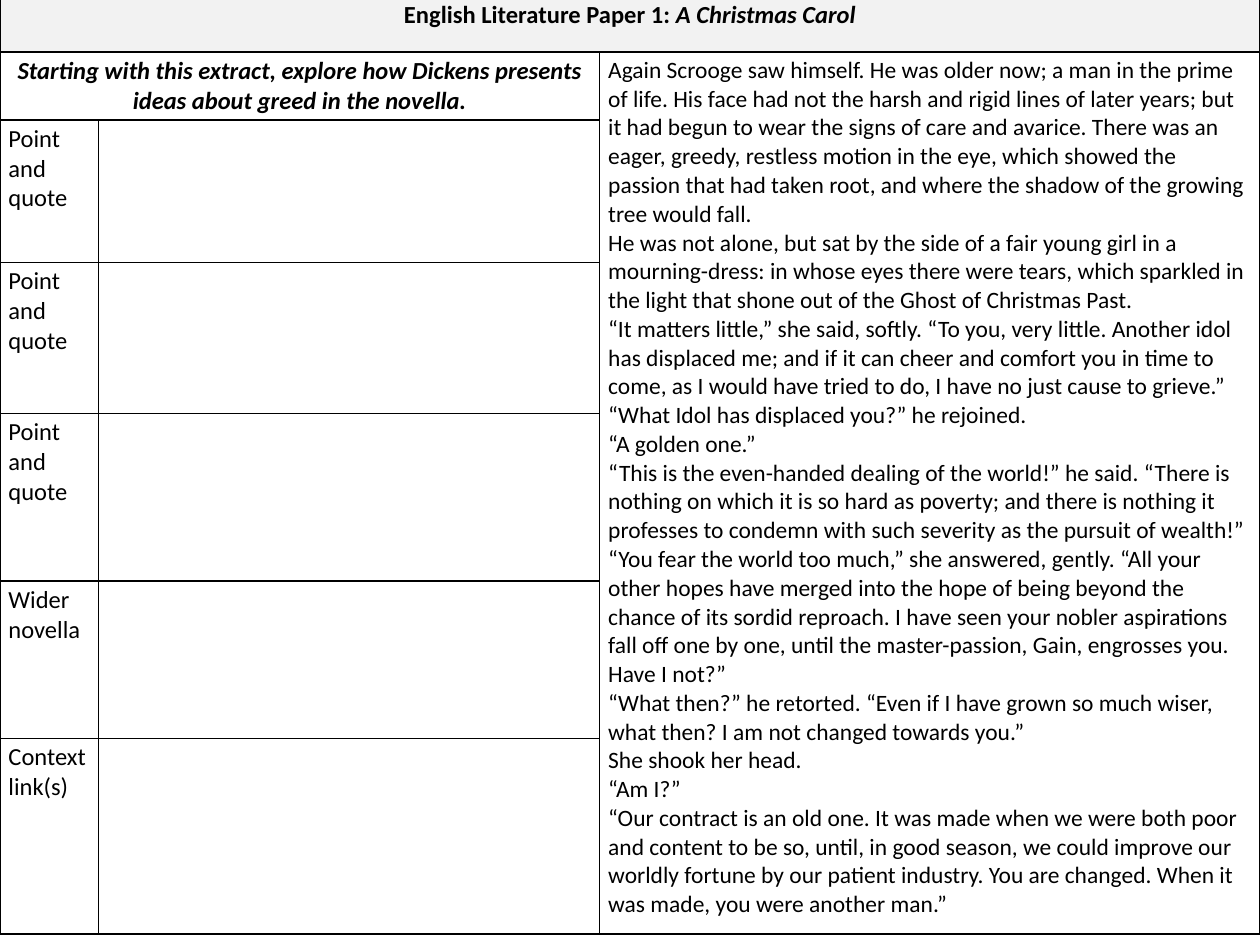
from lxml.etree import SubElement
from pptx import Presentation
from pptx.dml.color import RGBColor
from pptx.enum.text import PP_ALIGN as Align
from pptx.oxml.ns import qn
from pptx.util import Cm, Pt

COLOURS = {"ink": "000000", "header": "F2F2F2"}
FONT = "Calibri"
BORDER = Pt(1)

# Lengths in centimetres
SLIDE_SIZE = (25.4, 19.05)
TABLE_BOX = (0, -0.07, 25.4, 18.9)
COLUMN_SHARES = (0.78, 3.98, 5.24)
ROW_SHARES = (0.44, 0.54, 1.13, 1.2, 1.33, 1.25, 1.55)

TITLE = ("English Literature Paper 1: ", "A Christmas Carol")
QUESTION = ("Starting with this extract, explore how Dickens presents "
            "ideas about greed in the novella.")
PROMPTS = ["Point and quote"] * 3 + ["Wider novella", "Context link(s)"]
EXTRACT = [
    "Again Scrooge saw himself. He was older now; a man in the prime of life. "
    "His face had not the harsh and rigid lines of later years; but it had begun "
    "to wear the signs of care and avarice. There was an eager, greedy, restless "
    "motion in the eye, which showed the passion that had taken root, and where "
    "the shadow of the growing tree would fall.",
    "He was not alone, but sat by the side of a fair young girl in a "
    "mourning-dress: in whose eyes there were tears, which sparkled in the light "
    "that shone out of the Ghost of Christmas Past.",
    "“It matters little,” she said, softly. “To you, very little. Another idol "
    "has displaced me; and if it can cheer and comfort you in time to come, as I "
    "would have tried to do, I have no just cause to grieve.”",
    "“What Idol has displaced you?” he rejoined.",
    "“A golden one.”",
    "“This is the even-handed dealing of the world!” he said. “There is nothing "
    "on which it is so hard as poverty; and there is nothing it professes to "
    "condemn with such severity as the pursuit of wealth!”",
    "“You fear the world too much,” she answered, gently. “All your other hopes "
    "have merged into the hope of being beyond the chance of its sordid reproach. "
    "I have seen your nobler aspirations fall off one by one, until the "
    "master-passion, Gain, engrosses you. Have I not?”",
    "“What then?” he retorted. “Even if I have grown so much wiser, what then? "
    "I am not changed towards you.”",
    "She shook her head.",
    "“Am I?”",
    "“Our contract is an old one. It was made when we were both poor and content "
    "to be so, until, in good season, we could improve our worldly fortune by our "
    "patient industry. You are changed. When it was made, you were another man.”",
]


def format_span(span, size=14, bold=False, italic=False):
    font = span.font
    font.name, font.size = FONT, Pt(size)
    font.bold, font.italic = bold, italic
    font.color.rgb = RGBColor.from_string(COLOURS["ink"])


def write(cell, lines, align=Align.LEFT, **style):
    cell.text_frame.text = "\n".join(lines)
    for para in cell.text_frame.paragraphs:
        para.alignment = align
        for span in para.runs:
            format_span(span, **style)


def style_cell(cell):
    """Set the margins, a black line on every side and no fill."""
    cell.margin_left = cell.margin_right = Cm(0.17)
    cell.margin_top = cell.margin_bottom = Cm(0.08)
    properties = cell._tc.get_or_add_tcPr()
    for side in ("lnL", "lnR", "lnT", "lnB"):
        line = SubElement(properties, qn(f"a:{side}"), w=str(BORDER))
        fill = SubElement(line, qn("a:solidFill"))
        SubElement(fill, qn("a:srgbClr"), val=COLOURS["ink"])
    cell.fill.background()


def add_grid(page, box):
    """Add the empty table, its columns and rows sharing out the box."""
    left, top, width, height = box
    frame = page.shapes.add_table(len(ROW_SHARES), len(COLUMN_SHARES),
                                  Cm(left), Cm(top), Cm(width), Cm(height))
    table = frame.table
    table.first_row = table.horz_banding = False
    for column, share in zip(table.columns, COLUMN_SHARES):
        column.width = Cm(width * share / sum(COLUMN_SHARES))
    for row, share in zip(table.rows, ROW_SHARES):
        row.height = Cm(height * share / sum(ROW_SHARES))
    for cell in table.iter_cells():
        style_cell(cell)
    return table


def fill_header(table):
    cell = table.cell(0, 0)
    cell.merge(table.cell(0, 2))
    cell.fill.solid()
    cell.fill.fore_color.rgb = RGBColor.from_string(COLOURS["header"])
    para = cell.text_frame.paragraphs[0]
    para.alignment = Align.CENTER
    for text, italic in zip(TITLE, (False, True)):
        span = para.add_run()
        span.text = text
        format_span(span, bold=True, italic=italic)


def fill_planner(table):
    question = table.cell(1, 0)
    question.merge(table.cell(1, 1))
    write(question, [QUESTION], Align.CENTER, bold=True, italic=True)
    for row, prompt in enumerate(PROMPTS, start=2):
        write(table.cell(row, 0), [prompt])


def fill_extract(table):
    cell = table.cell(1, 2)
    cell.merge(table.cell(len(ROW_SHARES) - 1, 2))
    write(cell, EXTRACT, size=13.4)


def main():
    deck = Presentation()
    deck.slide_width, deck.slide_height = (Cm(side) for side in SLIDE_SIZE)
    page = deck.slides.add_slide(deck.slide_layouts[6])

    # Planning table: header, answer grid on the left, extract on the right
    table = add_grid(page, TABLE_BOX)
    fill_header(table)
    fill_planner(table)
    fill_extract(table)
    deck.save("out.pptx")


if __name__ == "__main__":
    main()
